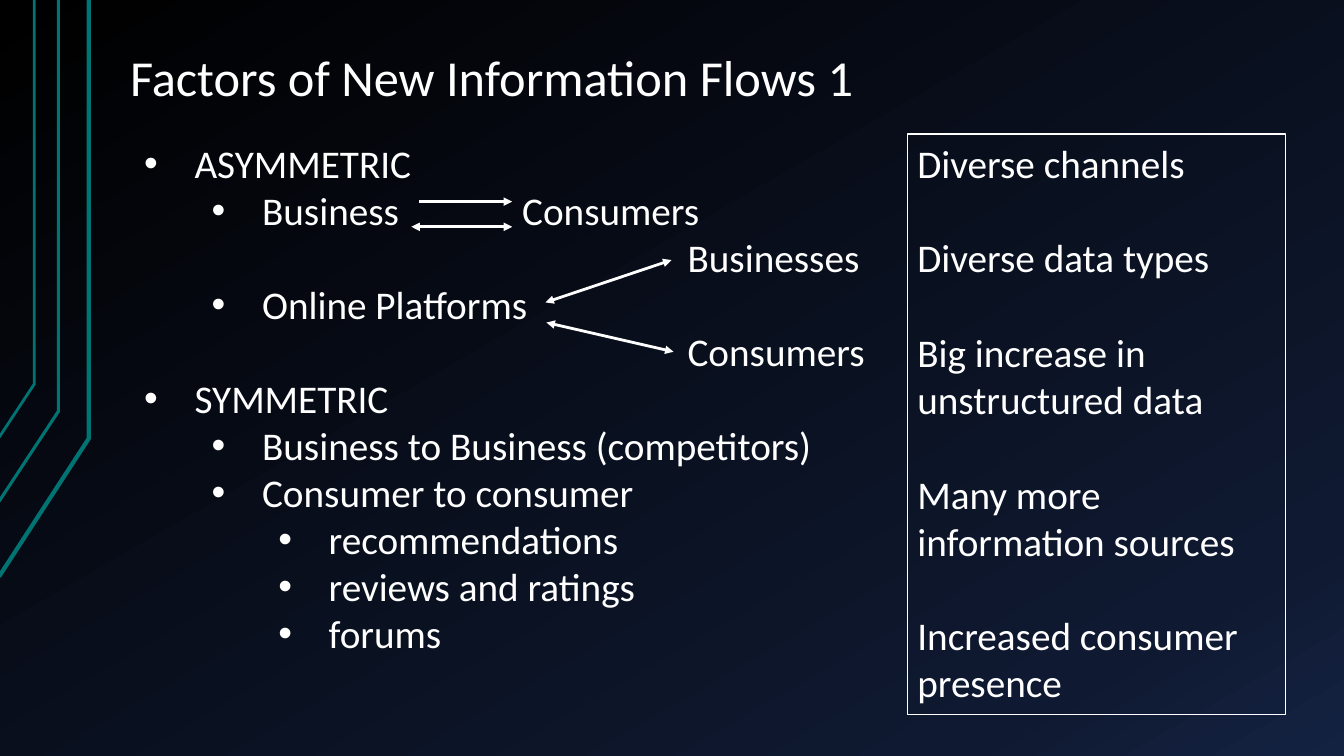
import pptx
import pptx.dml.color
import pptx.enum.shapes
import pptx.enum.text
import pptx.oxml
import pptx.oxml.ns
import pptx.util

PX = 9144
FONT = "Calibri"
COLORS = {"text": "FFFFFF", "trace": "007373"}
BACKGROUND_STOPS = [(0, "000000"), (85, "0F1931"), (100, "142242")]
TRACES = [
    ([(-1, 572), (88, 435), (88, 0)], 3),
    ([(-2, 499), (58, 408), (58, 0)], 2.25),
    ([(-1, 434), (34, 381), (34, 0)], 2),
]
OUTLINE = [
    ("ASYMMETRIC", 0, True),
    ("Business", 1, True),
    ("Businesses", 1, False),
    ("Online Platforms", 1, True),
    ("Consumers", 1, False),
    ("SYMMETRIC", 0, True),
    ("Business to Business (competitors)", 1, True),
    ("Consumer to consumer", 1, True),
    ("recommendations", 2, True),
    ("reviews and ratings", 2, True),
    ("forums", 2, True),
]
LEVEL_INDENTS = [50, 117, 183]
TARGET_INDENT = 539
EFFECTS = [
    "Diverse channels",
    "Diverse data types",
    "Big increase in unstructured data",
    "Many more information sources",
    "Increased consumer presence",
]
ARROWS = [
    ((416, 200), (508, 200), False),
    ((408, 225), (508, 225), True),
    ((541, 300), (666, 258), True),
    ((542, 320), (668, 349), True),
]


def px(value):
    return pptx.util.Emu(value * PX)


def color(name):
    return pptx.dml.color.RGBColor.from_string(COLORS[name])


def add_xml(parent, tag, **attributes):
    element = pptx.oxml.parse_xml(f"<a:{tag} {pptx.oxml.ns.nsdecls('a')}/>")
    for name, value in attributes.items():
        element.set(name, str(value))
    parent.append(element)
    return element


def place(shape, left, top, width, height):
    shape.left, shape.top = px(left), px(top)
    shape.width, shape.height = px(width), px(height)


def style_line(line, name, width):
    line.color.rgb = color(name)
    line.width = pptx.util.Pt(width)


def prepare_frame(frame, anchor=pptx.enum.text.MSO_ANCHOR.TOP, side=10, edge=5):
    frame.word_wrap = True
    frame.auto_size = pptx.enum.text.MSO_AUTO_SIZE.NONE
    frame.vertical_anchor = anchor
    frame.margin_left = frame.margin_right = px(side)
    frame.margin_top = frame.margin_bottom = px(edge)


def format_paragraph(paragraph, size=28, before=0, spacing=1.0):
    paragraph.alignment = pptx.enum.text.PP_ALIGN.LEFT
    paragraph.space_before = pptx.util.Pt(before)
    paragraph.line_spacing = spacing
    paragraph.font.name = FONT
    paragraph.font.size = pptx.util.Pt(size)
    paragraph.font.color.rgb = color("text")


def set_indent(paragraph, margin, bulleted):
    properties = paragraph._p.get_or_add_pPr()
    properties.set("marL", str(px(margin)))
    properties.set("indent", str(px(-50 if bulleted else 0)))
    if bulleted:
        add_xml(properties, "buFont", typeface="Arial")
        add_xml(properties, "buChar", char="•")
    else:
        add_xml(properties, "buNone")


def next_paragraph(frame, index):
    return frame.add_paragraph() if index else frame.paragraphs[0]


def set_background(slide):
    fill = slide.background.fill
    fill.gradient()
    fill.gradient_angle = 300
    stops = next(slide.element.iter(pptx.oxml.ns.qn("a:gsLst")))
    for stop in list(stops):
        stops.remove(stop)
    for position, value in BACKGROUND_STOPS:
        stop = add_xml(stops, "gs", pos=position * 1000)
        add_xml(stop, "srgbClr", val=value)


def add_trace(slide, points, width):
    builder = slide.shapes.build_freeform(*points[0], scale=PX)
    builder.add_line_segments(points[1:], close=False)
    trace = builder.convert_to_shape()
    trace.fill.background()
    trace.shadow.inherit = False
    style_line(trace.line, "trace", width)


def fill_title(title):
    place(title, 116, 8, 1039, 106)
    prepare_frame(title.text_frame, pptx.enum.text.MSO_ANCHOR.BOTTOM, 13, 7)
    title.text_frame.text = "Factors of New Information Flows 1"
    format_paragraph(title.text_frame.paragraphs[0], size=36, spacing=0.9)


def fill_outline(body):
    place(body, 133, 133, 1058, 576)
    prepare_frame(body.text_frame)
    for index, (text, level, bulleted) in enumerate(OUTLINE):
        paragraph = next_paragraph(body.text_frame, index)
        paragraph.text = text
        paragraph.level = level
        margin = LEVEL_INDENTS[level] if bulleted else TARGET_INDENT
        set_indent(paragraph, margin, bulleted)
        format_paragraph(paragraph)


def add_label(slide, text, left, top, width, height):
    label = slide.shapes.add_textbox(px(left), px(top), px(width), px(height))
    prepare_frame(label.text_frame, side=0, edge=0)
    label.text_frame.text = text
    format_paragraph(label.text_frame.paragraphs[0])


def add_effects_box(slide):
    box = slide.shapes.add_shape(
        pptx.enum.shapes.MSO_SHAPE.RECTANGLE, px(900), px(133), px(375), px(576)
    )
    box.fill.background()
    box.shadow.inherit = False
    style_line(box.line, "text", 1.25)
    prepare_frame(box.text_frame)
    for index, text in enumerate(EFFECTS):
        paragraph = next_paragraph(box.text_frame, index)
        paragraph.text = text
        format_paragraph(paragraph, before=34 if index else 0)


def add_arrow(slide, start, end, both_ways):
    arrow = slide.shapes.add_connector(
        pptx.enum.shapes.MSO_CONNECTOR.STRAIGHT,
        *(px(value) for value in start + end),
    )
    style_line(arrow.line, "text", 2)
    line = arrow.line._get_or_add_ln()
    if both_ways:
        add_xml(line, "headEnd", type="triangle")
    add_xml(line, "tailEnd", type="triangle")
    add_xml(arrow._element.spPr, "effectLst")


def main():
    presentation = pptx.Presentation()
    presentation.slide_width, presentation.slide_height = px(1333), px(750)
    slide = presentation.slides.add_slide(presentation.slide_layouts[1])
    set_background(slide)
    for points, width in TRACES:
        add_trace(slide, points, width)
    fill_title(slide.shapes.title)
    fill_outline(slide.placeholders[1])
    add_label(slide, "Consumers", 518, 185, 200, 48)
    add_effects_box(slide)
    for start, end, both_ways in ARROWS:
        add_arrow(slide, start, end, both_ways)
    presentation.save("out.pptx")


if __name__ == "__main__":
    main()
